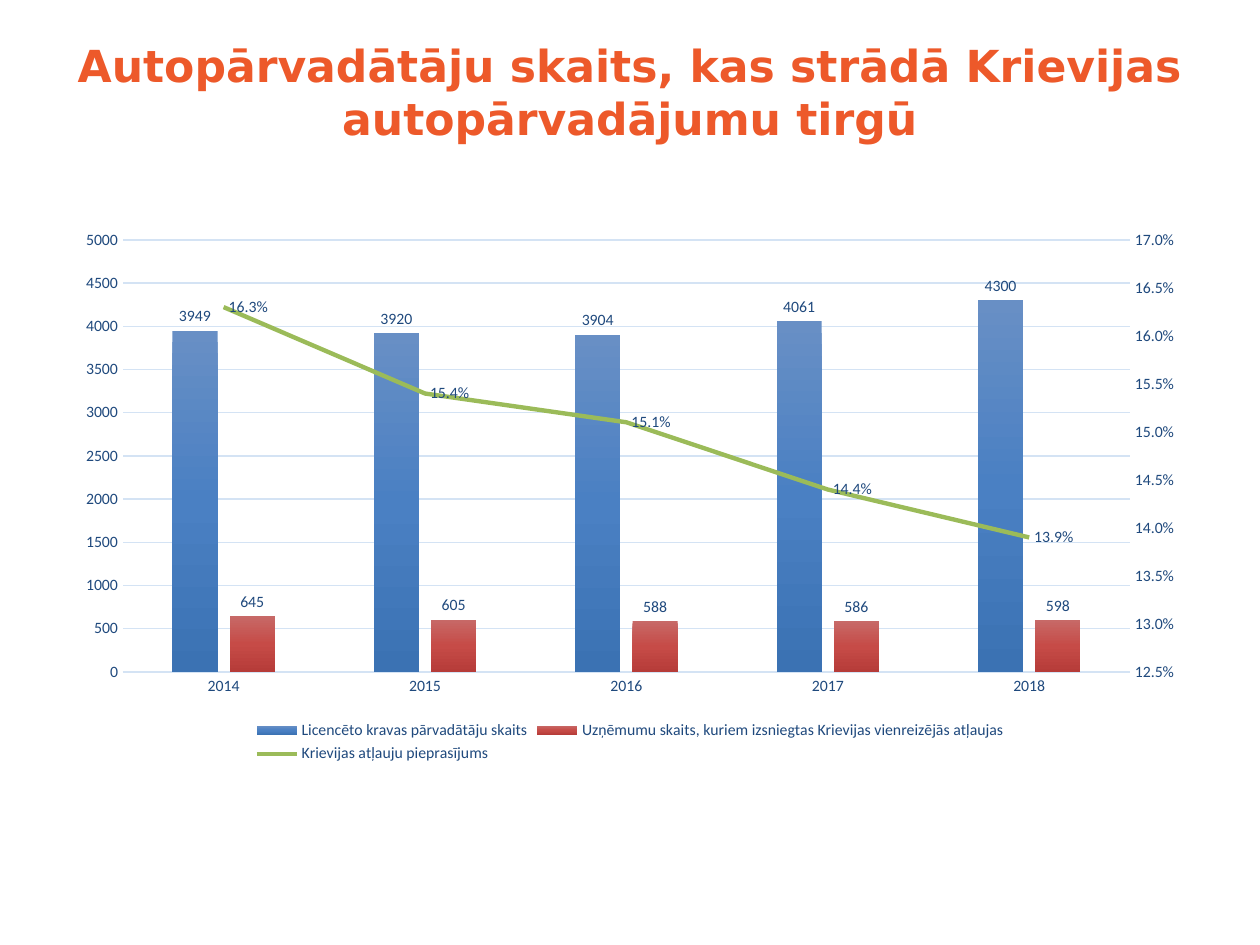
from copy import deepcopy

from lxml.etree import SubElement
from pptx import Presentation
from pptx.chart.axis import CategoryAxis, ValueAxis
from pptx.chart.data import CategoryChartData
from pptx.dml.color import RGBColor
from pptx.enum.chart import XL_CHART_TYPE, XL_LEGEND_POSITION, XL_MARKER_STYLE
from pptx.enum.chart import XL_LABEL_POSITION as LABEL_AT, XL_TICK_MARK as TICK
from pptx.enum.text import MSO_ANCHOR, PP_ALIGN
from pptx.oxml import parse_xml
from pptx.oxml.ns import nsdecls, qn
from pptx.util import Pt

TITLE = "Autopārvadātāju skaits, kas strādā Krievijas autopārvadājumu tirgū"
YEARS = ["2014", "2015", "2016", "2017", "2018"]
BARS = [
    ("Licencēto kravas pārvadātāju skaits",
     [3949, 3920, 3904, 4061, 4300], ["688FC5", "4A80C3", "3B72B3"]),
    ("Uzņēmumu skaits, kuriem izsniegtas Krievijas vienreizējās atļaujas",
     [645, 605, 588, 586, 598], ["C76967", "C64B47", "B63C39"]),
]
DEMAND = ("Krievijas atļauju pieprasījums",
          [0.163, 0.154, 0.151, 0.144, 0.139], "9BBB59")
ORANGE, NAVY, PALE = "ED592A", "1F497D", "D4E3F4"

TITLE_BOX = (63, 38, 1134, 157)
CHART_BOX = (63, 221, 1134, 547)
PLOT_BOX = (123, 240, 1007, 432)


def px(n):
    return round(n * 914400 / 126)


def rgb(color):
    return RGBColor.from_string(color)


def style_font(font, size, color, name="Calibri", bold=False):
    font.size, font.name, font.bold = Pt(size), name, bold
    font.color.rgb = rgb(color)


def style_line(line, color, width):
    line.color.rgb = rgb(color)
    line.width = Pt(width)


def fill_downward(fill, colors):
    """Top-to-bottom gradient with evenly spaced stops."""
    fill.gradient()
    fill.gradient_angle = 270
    stops = fill.gradient_stops
    stop_list = stops[0]._gs.getparent()
    for stop in list(stop_list):
        stop_list.remove(stop)
    for i, color in enumerate(colors):
        stop = SubElement(stop_list, qn("a:gs"),
                          pos=str(100000 * i // (len(colors) - 1)))
        SubElement(stop, qn("a:srgbClr"), val=color)


def label_values(series, position, number_format):
    labels = series.data_labels
    labels.show_value = True
    labels.position = position
    labels.number_format = number_format
    labels.number_format_is_linked = False
    style_font(labels.font, 9, NAVY)


def style_axis(axis):
    axis.major_tick_mark = axis.minor_tick_mark = TICK.NONE
    style_font(axis.tick_labels.font, 9, NAVY)


def scale_axis(axis, low, high, step, number_format):
    axis.minimum_scale, axis.maximum_scale, axis.major_unit = low, high, step
    axis.tick_labels.number_format = number_format
    axis.tick_labels.number_format_is_linked = False


def place_plot(plot_area):
    """Fix the inner plot rectangle as fractions of the chart."""
    for layout in plot_area.findall(qn("c:layout")):
        plot_area.remove(layout)
    left, top, width, height = CHART_BOX
    x, y, w, h = PLOT_BOX
    shares = {"x": (x - left) / width, "y": (y - top) / height,
              "w": w / width, "h": h / height}
    layout = parse_xml(f'<c:layout {nsdecls("c")}><c:manualLayout/></c:layout>')
    manual = layout[0]
    SubElement(manual, qn("c:layoutTarget"), val="inner")
    for side in "xy":
        SubElement(manual, qn(f"c:{side}Mode"), val="edge")
    for side, share in shares.items():
        SubElement(manual, qn(f"c:{side}"), val=f"{share:.4f}")
    plot_area.insert(0, layout)


def move_last_series_to_line(chart):
    """Turn the last bar series into a line on its own axes; return its value axis."""
    bar_chart = chart.plots[0]._element
    plot_area = bar_chart.getparent()
    cat, val = chart.category_axis._element, chart.value_axis._element
    right_cat, right_val = deepcopy(cat), deepcopy(val)
    for axis, own, other in ((right_cat, "5001", "5002"), (right_val, "5002", "5001")):
        axis.find(qn("c:axId")).set("val", own)
        axis.find(qn("c:crossAx")).set("val", other)
    val.addnext(right_cat)
    right_cat.addnext(right_val)
    right_val.find(qn("c:axPos")).set("val", "r")
    right_val.find(qn("c:crosses")).set("val", "max")
    CategoryAxis(right_cat).visible = False

    line_chart = parse_xml(
        f'<c:lineChart {nsdecls("c")}><c:grouping val="standard"/>'
        '<c:varyColors val="0"/><c:marker val="1"/>'
        '<c:axId val="5001"/><c:axId val="5002"/></c:lineChart>')
    series = bar_chart.findall(qn("c:ser"))[-1]
    for bar_only in series.findall(qn("c:invertIfNegative")):
        series.remove(bar_only)
    line_chart.insert(2, series)
    bar_chart.addnext(line_chart)
    place_plot(plot_area)
    return ValueAxis(right_val)


def add_title(slide):
    frame = slide.shapes.add_textbox(*map(px, TITLE_BOX)).text_frame
    frame.word_wrap = True
    frame.vertical_anchor = MSO_ANCHOR.TOP
    frame.margin_left = frame.margin_right = frame.margin_top = 0
    frame.text = TITLE
    heading = frame.paragraphs[0]
    heading.alignment = PP_ALIGN.CENTER
    style_font(heading.runs[0].font, 25.2, ORANGE, "DejaVu Sans", True)


def add_carrier_chart(slide):
    data = CategoryChartData()
    data.categories = YEARS
    for name, values, _ in BARS + [DEMAND]:
        data.add_series(name, values)
    chart = slide.shapes.add_chart(
        XL_CHART_TYPE.COLUMN_CLUSTERED, *map(px, CHART_BOX), data).chart
    chart.has_title = False
    style_font(chart.font, 10, "000000")
    chart.has_legend = True
    chart.legend.position = XL_LEGEND_POSITION.BOTTOM
    chart.legend.include_in_layout = False
    style_font(chart.legend.font, 9, NAVY)

    years, counts = chart.category_axis, chart.value_axis
    style_axis(years)
    style_line(years.format.line, PALE, 0.75)
    style_axis(counts)
    counts.format.line.fill.background()
    shares = move_last_series_to_line(chart)
    shares.has_major_gridlines = False
    scale_axis(counts, 0, 5000, 500, "General")
    scale_axis(shares, 0.125, 0.17, 0.005, "0.0%")
    style_line(counts.major_gridlines.format.line, PALE, 0.75)

    columns, trend = chart.plots
    columns.vary_by_categories = False
    columns.gap_width, columns.overlap = 219, -27
    for series, (_, _, colors) in zip(columns.series, BARS):
        fill_downward(series.format.fill, colors)
        label_values(series, LABEL_AT.OUTSIDE_END, "General")
    demand = trend.series[0]
    demand.smooth = False
    demand.marker.style = XL_MARKER_STYLE.NONE
    style_line(demand.format.line, DEMAND[2], 2.5)
    label_values(demand, LABEL_AT.RIGHT, "0.0%")


def main():
    deck = Presentation()
    deck.slide_width, deck.slide_height = px(1260), px(945)
    slide = deck.slides.add_slide(deck.slide_layouts[6])
    add_title(slide)
    add_carrier_chart(slide)
    deck.save("out.pptx")


if __name__ == "__main__":
    main()
